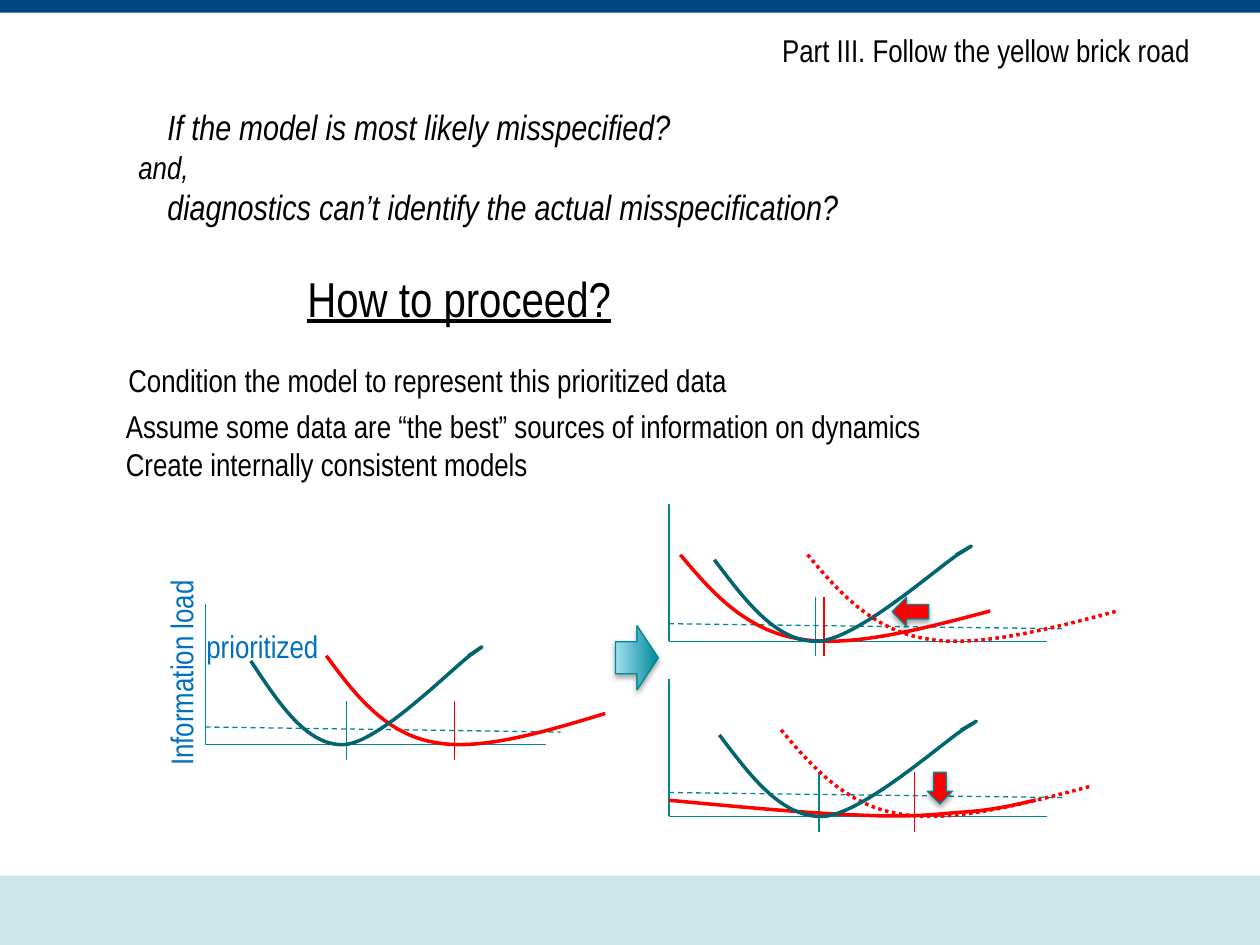
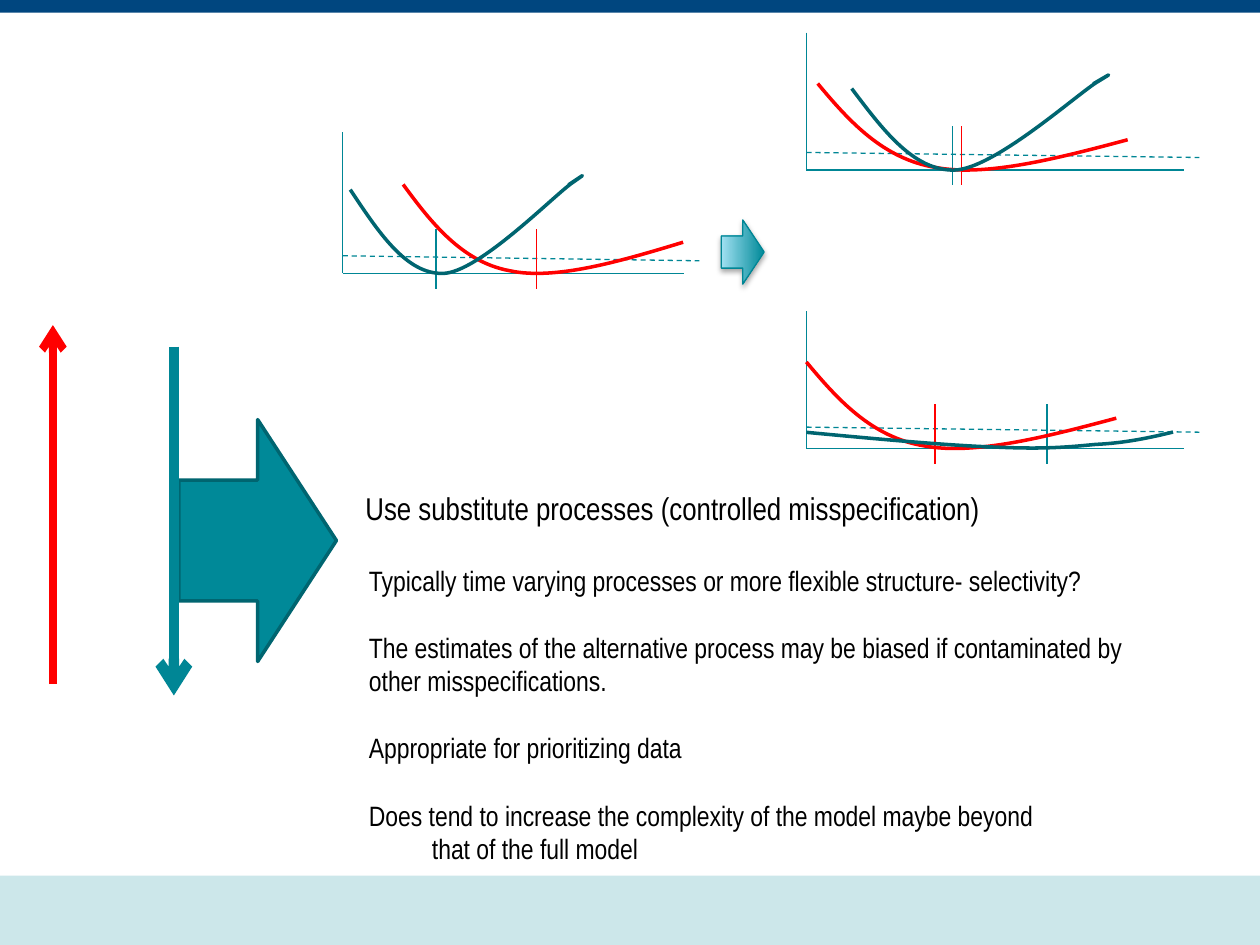
from dataclasses import dataclass

from lxml.etree import SubElement
from pptx import Presentation
from pptx.dml.color import RGBColor
from pptx.enum.dml import MSO_LINE
from pptx.enum.shapes import MSO_CONNECTOR, MSO_SHAPE
from pptx.enum.text import MSO_ANCHOR, MSO_AUTO_SIZE, PP_ALIGN
from pptx.oxml.ns import qn
from pptx.util import Inches, Pt

FONT = "Arial Narrow"
BLACK, RED, BLUE = "000000", "FF0000", "0070C0"
TEAL, AXIS_TEAL, DARK_TEAL, PALE_TEAL = "008998", "008695", "006570", "A0E0F1"
NAVY, BAND = "00467F", "CCE7EA"
THIN = 0.75


@dataclass(frozen=True)
class Profile:
    width_share: float
    height_share: float
    points: tuple


RISING = Profile(0.82, 0.63, (
    (0, 0), (0.1, 0.43), (0.21, 0.87), (0.38, 0.97), (0.54, 1.08), (0.77, 0.87), (1, 0.65)))
VALLEY = Profile(0.68, 0.69, (
    (0, 0.14), (0.12, 0.57), (0.24, 1.01), (0.4, 1), (0.55, 0.99),
    (0.86, 0.24), (0.95, 0.08), (1.04, -0.07), (0.99, 0.01), (0.94, 0.09)))
FLAT = Profile(0.97, 0.12, (
    (1, 0), (0.94, 0.33), (0.87, 0.67), (0.79, 0.75), (0.71, 0.92),
    (0.65, 1.05), (0.52, 0.92), (0.39, 0.83), (0.19, 0.42), (0, 0.02)))


@dataclass(frozen=True)
class Curve:
    profile: Profile
    offset: float
    color: str
    dash: MSO_LINE | None = None


@dataclass(frozen=True)
class Panel:
    left: float
    baseline: float
    width: float
    height: float
    teal_tick: float
    red_tick: float
    curves: tuple
    load_height: float = 0.14


@dataclass(frozen=True)
class Line:
    text: str
    size: float
    indent: float = 0
    space_before: float = 0


@dataclass(frozen=True)
class Label:
    left: float
    top: float
    width: float
    height: float
    lines: tuple
    color: str = BLACK
    italic: bool = False
    underline: bool = False
    rotation: float = 0


@dataclass(frozen=True)
class BlockArrow:
    kind: MSO_SHAPE
    left: float
    top: float
    width: float
    height: float


SLIDE_1_PANELS = (
    Panel(1.63, 5.91, 2.7, 1.12, 2.75, 3.61,
          (Curve(RISING, 0.96, RED), Curve(VALLEY, 0.36, DARK_TEAL))),
    Panel(5.31, 5.09, 3, 1.09, 6.47, 6.54,
          (Curve(RISING, 0.09, RED), Curve(VALLEY, 0.36, DARK_TEAL),
           Curve(RISING, 1.1, RED, MSO_LINE.ROUND_DOT))),
    Panel(5.31, 6.48, 3, 1.09, 6.5, 7.26,
          (Curve(RISING, 0.89, RED, MSO_LINE.ROUND_DOT), Curve(FLAT, 0, RED),
           Curve(VALLEY, 0.4, DARK_TEAL)), 0.19),
)
SLIDE_2_PANELS = (
    Panel(2.72, 2.17, 2.71, 1.12, 3.46, 4.26,
          (Curve(RISING, 0.48, RED), Curve(VALLEY, 0.06, DARK_TEAL))),
    Panel(6.4, 1.35, 3, 1.09, 7.56, 7.63,
          (Curve(RISING, 0.09, RED), Curve(VALLEY, 0.36, DARK_TEAL))),
    Panel(6.4, 3.56, 3, 1.09, 8.31, 7.42,
          (Curve(RISING, 0, RED), Curve(FLAT, 0, DARK_TEAL)), 0.17),
)

SLIDE_1_TITLE = Label(2.34, 2.08, 2.94, 0.57, (Line("How to proceed?", 28),), underline=True)
SLIDE_1_LABELS = (
    Label(0.9, 3.18, 6.59, 0.71, (
        Line("Assume some data are “the best” sources of information on dynamics", 18),
        Line("Create internally consistent models", 18))),
    Label(0.92, 2.82, 5.69, 0.4, (
        Line("Condition the model to represent this prioritized data", 18),)),
    Label(1, 0.79, 5.8, 1.08, (
        Line("If the model is most likely misspecified?", 20, 0.23),
        Line("and,", 18),
        Line("diagnostics can’t identify the actual misspecification?", 20, 0.23)), italic=True),
    Label(1.54, 4.93, 1.1, 0.4, (Line("prioritized", 18),), BLUE),
    Label(0.59, 5.13, 1.69, 0.4, (Line("Information load", 18),), BLUE, rotation=270),
    Label(6.11, 0.2, 3.47, 0.4, (Line("Part III. Follow the yellow brick road", 18),)),
)
SLIDE_2_TITLE = Label(2.8, 3.83, 5.7, 0.4, (
    Line("Use substitute processes (controlled misspecification)", 18),))
SLIDE_2_BODY = Label(2.83, 4.42, 6.23, 3.06, (
    Line("Typically time varying processes or more flexible structure- selectivity?", 16),
    Line("The estimates of the alternative process may be biased if contaminated by", 16,
         space_before=19.2),
    Line("other misspecifications.", 16),
    Line("Appropriate for prioritizing data", 16, space_before=19.2),
    Line("Does tend to increase the complexity of the model maybe beyond", 16, space_before=19.2),
    Line("that of the full model", 16, 0.5)))


def rgb(color: str) -> RGBColor:
    return RGBColor.from_string(color)


def set_line(line, color: str, width: float, dash=None) -> None:
    line.color.rgb = rgb(color)
    line.width = Pt(width)
    if dash is not None:
        line.dash_style = dash


def fill_label(shape, label: Label) -> None:
    shape.left, shape.top = Inches(label.left), Inches(label.top)
    shape.width, shape.height = Inches(label.width), Inches(label.height)
    shape.rotation = label.rotation
    frame = shape.text_frame
    frame.word_wrap = True
    frame.auto_size = MSO_AUTO_SIZE.NONE
    frame.vertical_anchor = MSO_ANCHOR.TOP
    for index, line in enumerate(label.lines):
        paragraph = frame.add_paragraph() if index else frame.paragraphs[0]
        paragraph.text = line.text
        paragraph.alignment = PP_ALIGN.LEFT
        paragraph.space_before = Pt(line.space_before)
        if line.indent:
            paragraph._p.get_or_add_pPr().set("marL", str(Inches(line.indent)))
        font = paragraph.font
        font.name, font.size = FONT, Pt(line.size)
        font.italic, font.underline = label.italic, label.underline
        font.color.rgb = rgb(label.color)


def add_label(slide, label: Label) -> None:
    fill_label(slide.shapes.add_textbox(0, 0, 0, 0), label)


def add_line(slide, start: tuple, end: tuple, color: str = AXIS_TEAL,
             width: float = THIN, dash=None, arrow: bool = False) -> None:
    connector = slide.shapes.add_connector(
        MSO_CONNECTOR.STRAIGHT, *(Inches(value) for value in (*start, *end)))
    set_line(connector.line, color, width, dash)
    properties = connector.element.spPr
    if arrow:
        SubElement(properties.find(qn("a:ln")), qn("a:tailEnd"), type="arrow")
    SubElement(properties, qn("a:effectLst"))


def bend_outline(shape, points: tuple) -> None:
    outline = next(shape.element.iter(qn("a:path")))
    for child in list(outline):
        outline.remove(child)
    for index, (x, y) in enumerate(points):
        if index == 0:
            segment = SubElement(outline, qn("a:moveTo"))
        elif index % 3 == 1:
            segment = SubElement(outline, qn("a:cubicBezTo"))
        SubElement(segment, qn("a:pt"), x=str(round(x * shape.width)),
                   y=str(round(y * shape.height)))


def add_curve(slide, panel: Panel, curve: Curve) -> None:
    profile = curve.profile
    left, bottom = panel.left + curve.offset, panel.baseline
    right = left + panel.width * profile.width_share
    top = bottom - panel.height * profile.height_share
    builder = slide.shapes.build_freeform(Inches(left), Inches(top))
    builder.add_line_segments([(Inches(right), Inches(bottom))], close=False)
    shape = builder.convert_to_shape()
    bend_outline(shape, profile.points)
    shape.shadow.inherit = False
    shape.fill.background()
    set_line(shape.line, curve.color, 2, curve.dash)


def add_panel(slide, panel: Panel) -> None:
    left, base = panel.left, panel.baseline
    load = base - panel.load_height
    add_line(slide, (left, base - panel.height), (left, base))
    add_line(slide, (left, base), (left + panel.width, base))
    add_line(slide, (left, load), (left + panel.width + 0.12, load + 0.04), dash=MSO_LINE.DASH)
    for x, color in ((panel.teal_tick, AXIS_TEAL), (panel.red_tick, RED)):
        add_line(slide, (x, base - 0.35), (x, base + 0.12), color)
    for curve in panel.curves:
        add_curve(slide, panel, curve)


def add_block(slide, block: BlockArrow, fill: str, line: str | None = None, width: float = THIN):
    shape = slide.shapes.add_shape(
        block.kind, Inches(block.left), Inches(block.top),
        Inches(block.width), Inches(block.height))
    shape.shadow.inherit = False
    shape.fill.solid()
    shape.fill.fore_color.rgb = rgb(fill)
    if line:
        set_line(shape.line, line, width)
    else:
        shape.line.fill.background()
    return shape


def add_shadowed_arrow(slide, block: BlockArrow, fill: str):
    shape = add_block(slide, block, fill, AXIS_TEAL)
    effects = shape.element.spPr.find(qn("a:effectLst"))
    shadow = SubElement(effects, qn("a:outerShdw"), blurRad=str(Pt(3.1)),
                        dist=str(Pt(1.8)), dir="5400000", rotWithShape="0")
    color = SubElement(shadow, qn("a:srgbClr"), val=BLACK)
    SubElement(color, qn("a:alpha"), val="35000")
    return shape


def add_transition_arrow(slide, left: float, top: float) -> None:
    block = BlockArrow(MSO_SHAPE.DOWN_ARROW, left, top, 0.51, 0.34)
    shape = add_shadowed_arrow(slide, block, TEAL)
    shape.rotation = 270
    shape.fill.gradient()
    shape.fill.gradient_angle = 90
    for stop, position, color in zip(shape.fill.gradient_stops, (0, 1), (TEAL, PALE_TEAL)):
        stop.position = position
        stop.color.rgb = rgb(color)


def move_bands_to_master(presentation, slide) -> None:
    tree = presentation.slide_master.shapes.element
    for top, height, color in ((0, 0.1, NAVY), (6.95, 0.55, BAND)):
        band = add_block(slide, BlockArrow(MSO_SHAPE.RECTANGLE, 0, top, 10, height), color)
        tree.insert(2, band.element)


def add_slide(presentation, title: Label):
    slide = presentation.slides.add_slide(presentation.slide_layouts[5])
    fill_label(slide.shapes.title, title)
    return slide


def build_proceed_slide(presentation):
    slide = add_slide(presentation, SLIDE_1_TITLE)
    for panel in SLIDE_1_PANELS:
        add_panel(slide, panel)
    add_transition_arrow(slide, 4.8, 5.05)
    for block in (BlockArrow(MSO_SHAPE.LEFT_ARROW, 7.08, 4.74, 0.29, 0.23),
                  BlockArrow(MSO_SHAPE.DOWN_ARROW, 7.36, 6.13, 0.2, 0.25)):
        add_shadowed_arrow(slide, block, RED)
    for label in SLIDE_1_LABELS:
        add_label(slide, label)
    return slide


def build_substitute_slide(presentation) -> None:
    slide = add_slide(presentation, SLIDE_2_TITLE)
    add_label(slide, SLIDE_2_BODY)
    add_block(slide, BlockArrow(MSO_SHAPE.RIGHT_ARROW, 1.42, 3.33, 1.25, 1.92),
              TEAL, DARK_TEAL, 2)
    add_line(slide, (1.38, 2.75), (1.38, 5.52), width=6, arrow=True)
    add_line(slide, (0.42, 5.43), (0.42, 2.58), RED, 4.5, arrow=True)
    for panel in SLIDE_2_PANELS:
        add_panel(slide, panel)
    add_transition_arrow(slide, 5.64, 1.83)


def main() -> None:
    presentation = Presentation()
    presentation.slide_width, presentation.slide_height = Inches(10), Inches(7.5)
    move_bands_to_master(presentation, build_proceed_slide(presentation))
    build_substitute_slide(presentation)
    presentation.save("out.pptx")


if __name__ == "__main__":
    main()
